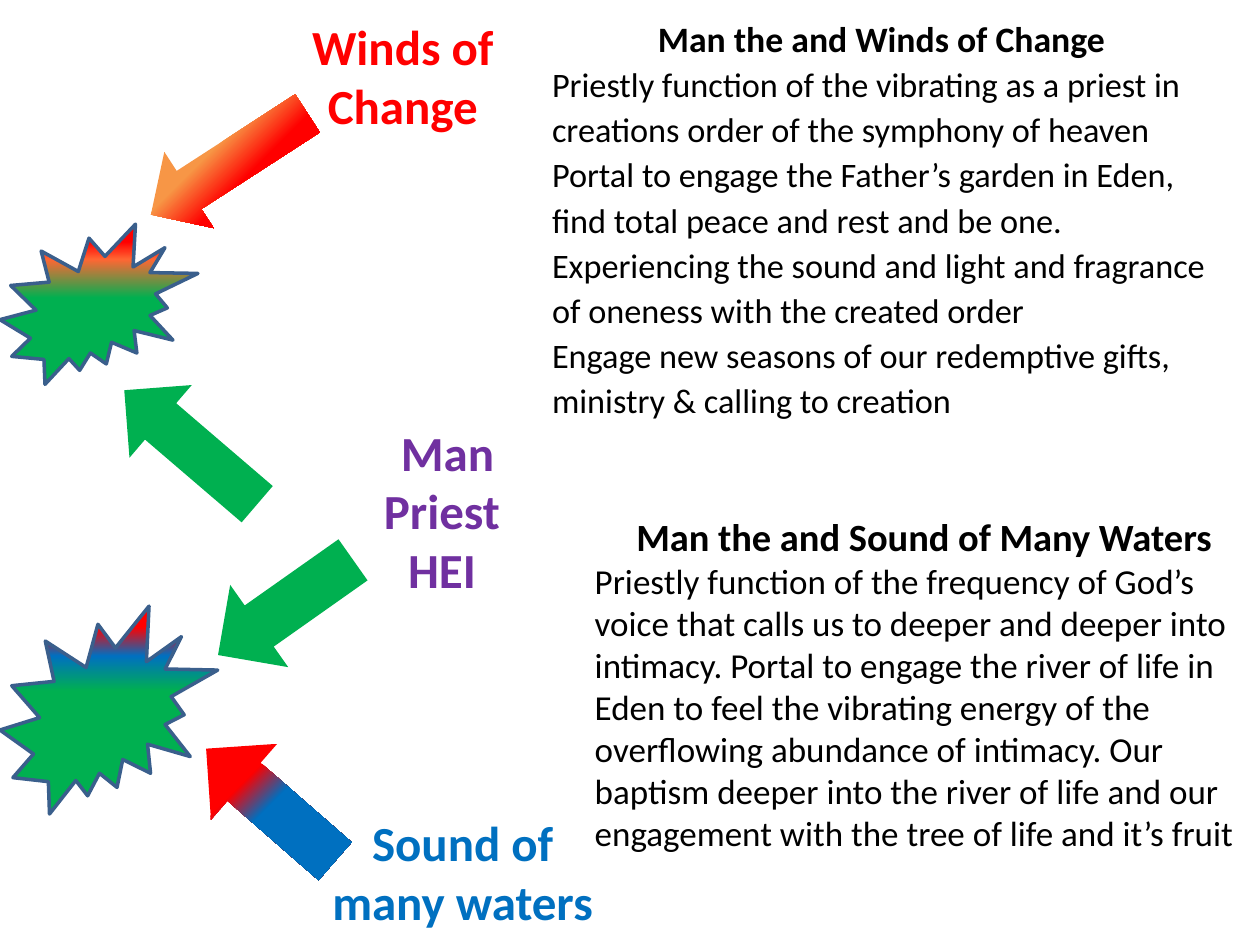
"""Build the slide on man, the winds of change and the sound of many waters."""
from lxml.etree import SubElement, fromstring
from pptx import Presentation
from pptx.dml.color import RGBColor
from pptx.enum.shapes import MSO_SHAPE
from pptx.enum.text import PP_ALIGN
from pptx.oxml.ns import nsdecls, qn
from pptx.util import Cm, Pt

GREEN, RED, BLUE, ORANGE = "00B050", "FF0000", "0070C0", "F79646"
PURPLE, BLACK, OUTLINE = "7030A0", "000000", "3A5F8C"
DOWNWARD = '<a:lin ang="5400000" scaled="0"/>'
FROM_CORNER = '<a:path path="circle"><a:fillToRect l="100000" t="100000"/></a:path>'


def paint(fill, colour):
    fill.solid()
    fill.fore_color.rgb = RGBColor.from_string(colour)


def write(para, text, size=28, colour=BLACK, bold=True, align=PP_ALIGN.CENTER, spacing=None):
    para.text = text
    para.alignment = align
    para.line_spacing = spacing
    for span in para.runs:
        span.font.name = "Calibri"
        span.font.size = Pt(size)
        span.font.bold = bold
        paint(span.font.fill, colour)


deck = Presentation()
deck.slide_width, deck.slide_height = Cm(25.4), Cm(19.05)
page = deck.slides.add_slide(deck.slide_layouts[6])

waters_body = {"size": 20, "bold": False, "align": PP_ALIGN.LEFT}
winds_body = {"size": 19.6, "bold": False, "align": PP_ALIGN.LEFT, "spacing": 1.1}

texts = [
    ((7.32, 8.51, 3.18, 3.71), [
        (" Man\vPriest", {"colour": PURPLE}),
        ("HEI", {"colour": PURPLE}),
    ]),
    ((6.53, 16.38, 5.59, 2.46), [("Sound of many waters", {"colour": BLUE})]),
    ((6.1, 0.33, 4.04, 2.67), [("Winds of Change", {"colour": RED})]),
    ((11.99, 10.34, 13.28, 7.8), [
        ("Man the and Sound of Many Waters", {"size": 22}),
        ("Priestly function of the frequency of God’s voice that calls us to deeper and "
         "deeper into intimacy. Portal to engage the river of life in Eden to feel the "
         "vibrating energy of the overflowing abundance of intimacy. Our baptism deeper "
         "into the river of life and our engagement with the tree of life and it’s fruit",
         waters_body),
    ]),
    ((11.13, 0.33, 13.28, 8.69), [
        ("Man the and Winds of Change", {"size": 20.4}),
        ("Priestly function of the vibrating as a priest in creations order of the "
         "symphony of heaven", winds_body),
        ("Portal to engage the Father’s garden in Eden, find total peace and rest and be "
         "one. Experiencing the sound and light and fragrance of oneness with the created "
         "order", winds_body),
        ("Engage new seasons of our redemptive gifts, ministry & calling to creation",
         winds_body),
    ]),
]
for place, paragraphs in texts:
    box = page.shapes.add_textbox(*map(Cm, place))
    frame = box.text_frame
    frame.word_wrap = True
    frame.margin_left = frame.margin_top = frame.margin_right = frame.margin_bottom = 0
    for index, (text, style) in enumerate(paragraphs):
        para = frame.add_paragraph() if index else frame.paragraphs[0]
        write(para, text, **style)

arrow, burst = MSO_SHAPE.RIGHT_ARROW, MSO_SHAPE.EXPLOSION2
figures = [
    (arrow, (4.09, 11.23, 3.33, 2.03), 144.8, [(0, GREEN)]),
    (burst, (0, 12.22, 4.39, 4.19), 0, [(10, RED), (24, BLUE), (41, GREEN)]),
    (arrow, (3.73, 15.21, 3.45, 2.03), 221.1, [(50, BLUE), (63, RED)]),
    (arrow, (2.74, 2.39, 3.76, 1.83), 147.1, [(42, RED), (58, ORANGE)]),
    (arrow, (2.08, 8.05, 3.53, 1.93), 220.6, [(0, GREEN)]),
    (burst, (0, 4.52, 3.99, 3.23), 0, [(11, RED), (22, "FF6633"), (46, GREEN)]),
]
for kind, place, angle, stops in figures:
    figure = page.shapes.add_shape(kind, *map(Cm, place))
    figure.rotation = angle
    figure.shadow.inherit = False
    if len(stops) == 1:
        paint(figure.fill, stops[0][1])
    else:
        direction = DOWNWARD if kind == burst else FROM_CORNER
        gradient = fromstring(
            f'<a:gradFill {nsdecls("a")} rotWithShape="0"><a:gsLst/>{direction}</a:gradFill>')
        for position, colour in stops:
            stop = SubElement(gradient[0], qn("a:gs"), pos=str(position * 1000))
            SubElement(stop, qn("a:srgbClr"), val=colour)
        figure._element.spPr.find(qn("a:prstGeom")).addnext(gradient)
    if kind == burst:
        paint(figure.line.fill, OUTLINE)
        figure.line.width = Pt(2)
    else:
        figure.line.fill.background()

deck.save("out.pptx")
